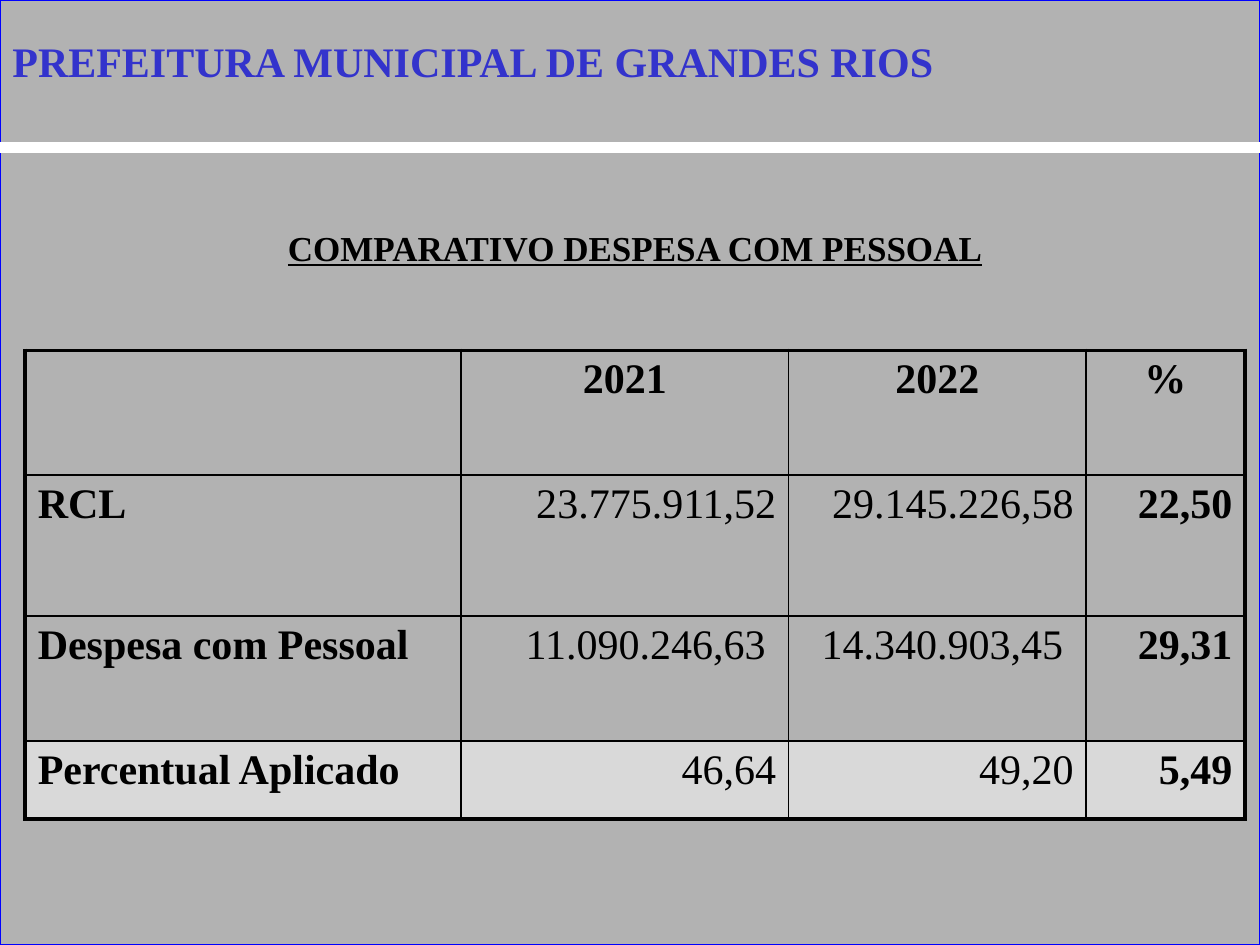
from typing import NamedTuple

from lxml.etree import SubElement
from pptx import Presentation
from pptx.dml.color import RGBColor
from pptx.enum.shapes import MSO_CONNECTOR, MSO_SHAPE
from pptx.enum.text import PP_ALIGN
from pptx.oxml.ns import qn
from pptx.util import Inches, Pt

FONT = "Times New Roman"
THICK, THIN = 2.25, 1
WIDTHS = (3.46, 2.6, 2.36, 1.26)


class Row(NamedTuple):
    """A table row: its height, its texts and its fill, if any."""

    height: float
    texts: tuple
    fill: str = ""


ROWS = (
    Row(0.99, ("", "2021", "2022", "%")),
    Row(1.12, ("RCL", "23.775.911,52", "29.145.226,58", "22,50")),
    Row(0.99, ("Despesa com Pessoal", "11.090.246,63 ", "14.340.903,45 ", "29,31")),
    Row(0.62, ("Percentual Aplicado", "46,64", "49,20", "5,49"), "D9D9D9"),
)


def paint(color, code: str) -> None:
    """Give a colour format its hex colour."""
    color.rgb = RGBColor.from_string(code)


def style(par, size: float, code: str = "000000", bold: bool = True) -> None:
    """Set the font of a paragraph."""
    par.font.name, par.font.size, par.font.bold = FONT, Pt(size), bold
    paint(par.font.color, code)


def add_text(slide, box: tuple, text: str):
    """Add a wrapped text box and return its paragraph."""
    frame = slide.shapes.add_textbox(*map(Inches, box)).text_frame
    frame.word_wrap = True
    frame.text = text
    return frame.paragraphs[0]


def add_edge(cell, side: str, width: float) -> None:
    """Draw one black border of a cell."""
    edge = SubElement(cell._tc.get_or_add_tcPr(), qn(f"a:ln{side}"), w=str(Pt(width)))
    fill = SubElement(edge, qn("a:solidFill"))
    SubElement(fill, qn("a:srgbClr"), val="000000")


def add_shade(par) -> None:
    """Cast a grey shadow behind the text of a paragraph."""
    for run in par.runs:
        list_ = SubElement(run._r.get_or_add_rPr(), qn("a:effectLst"))
        shade = SubElement(list_, qn("a:outerShdw"), dist=str(Pt(2)), dir="2700000")
        SubElement(shade, qn("a:srgbClr"), val="808080")


def add_back(slide) -> None:
    """Draw the grey ground and the white rule."""
    ground = slide.shapes.add_shape(MSO_SHAPE.RECTANGLE, 0, 0, Inches(10), Inches(7.5))
    ground.shadow.inherit = False
    ground.fill.solid()
    paint(ground.fill.fore_color, "B2B2B2")
    paint(ground.line.color, "0000FF")
    ground.line.width = Pt(0.75)
    y = Inches(1.17)
    rule = slide.shapes.add_connector(MSO_CONNECTOR.STRAIGHT, 0, y, Inches(10), y)
    paint(rule.line.color, "FFFFFF")
    rule.line.width = Pt(6)
    SubElement(rule._element.spPr, qn("a:effectLst"))


def fill_cell(cell, i: int, j: int) -> None:
    """Write, border and fill the cell at row i and column j."""
    row, last = ROWS[i], len(WIDTHS) - 1
    cell.text = row.texts[j]
    par = cell.text_frame.paragraphs[0]
    style(par, 24, bold=i == 0 or j in (0, last))
    if j:
        par.alignment = PP_ALIGN.RIGHT if i else PP_ALIGN.CENTER
    outer = {"L": j == 0, "R": j == last, "T": i == 0, "B": i == len(ROWS) - 1}
    for side, thick in outer.items():
        add_edge(cell, side, THICK if thick else THIN)
    if row.fill:
        cell.fill.solid()
        paint(cell.fill.fore_color, row.fill)
    else:
        cell.fill.background()


def add_grid(slide) -> None:
    """Add the table of spending."""
    box = (0.2, 2.78, sum(WIDTHS), sum(row.height for row in ROWS))
    table = slide.shapes.add_table(len(ROWS), len(WIDTHS), *map(Inches, box)).table
    table.first_row = table.horz_banding = False
    for col, width in zip(table.columns, WIDTHS):
        col.width = Inches(width)
    for i, row in enumerate(ROWS):
        table.rows[i].height = Inches(row.height)
        for j in range(len(WIDTHS)):
            fill_cell(table.cell(i, j), i, j)


def main() -> None:
    """Build the slide and save it."""
    deck = Presentation()
    deck.slide_width, deck.slide_height = Inches(10), Inches(7.5)
    slide = deck.slides.add_slide(deck.slide_layouts[6])
    add_back(slide)
    head = add_text(slide, (0.58, 1.58, 8.92, 4.64), "COMPARATIVO DESPESA COM PESSOAL")
    style(head, 20)
    head.font.underline = True
    head.alignment, head.line_spacing = PP_ALIGN.CENTER, 1.5
    add_grid(slide)
    title = add_text(slide, (0, 0.23, 9.49, 0.5), "PREFEITURA MUNICIPAL DE GRANDES RIOS")
    style(title, 24, "3333CC")
    add_shade(title)
    deck.save("out.pptx")


if __name__ == "__main__":
    main()
